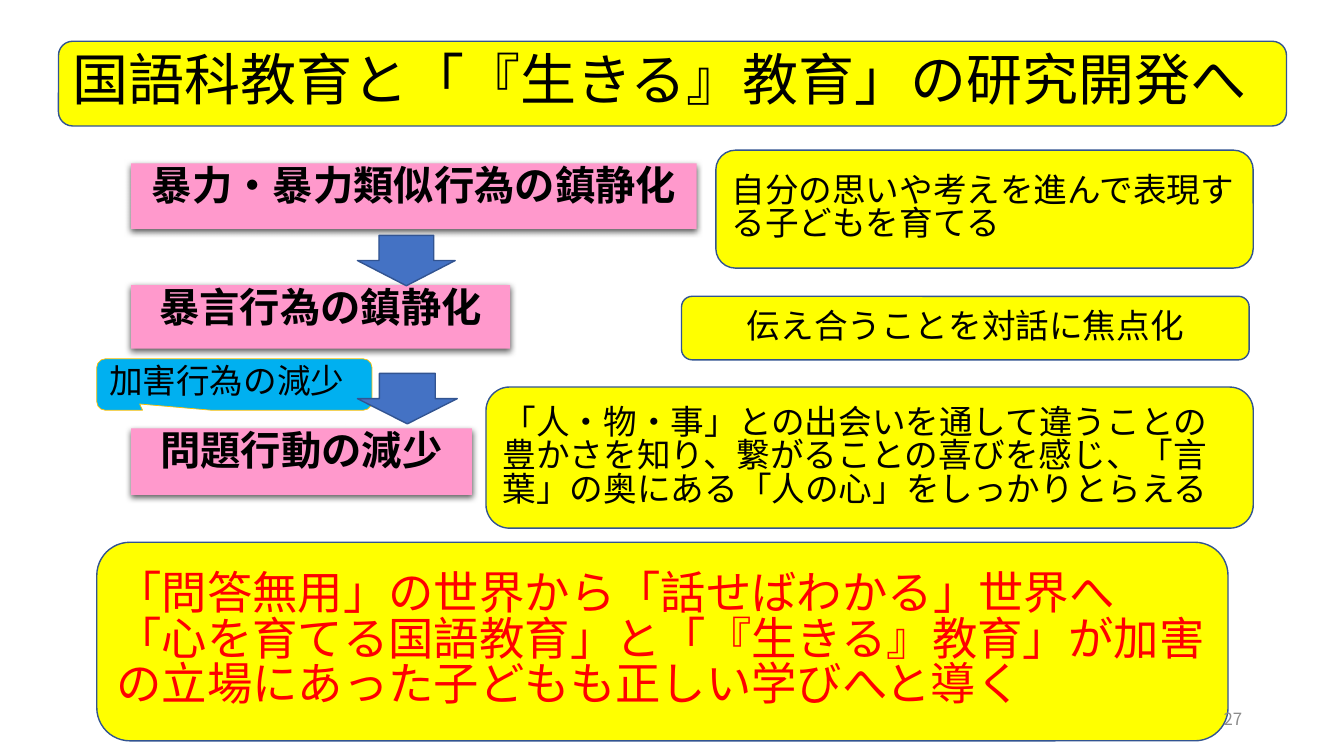
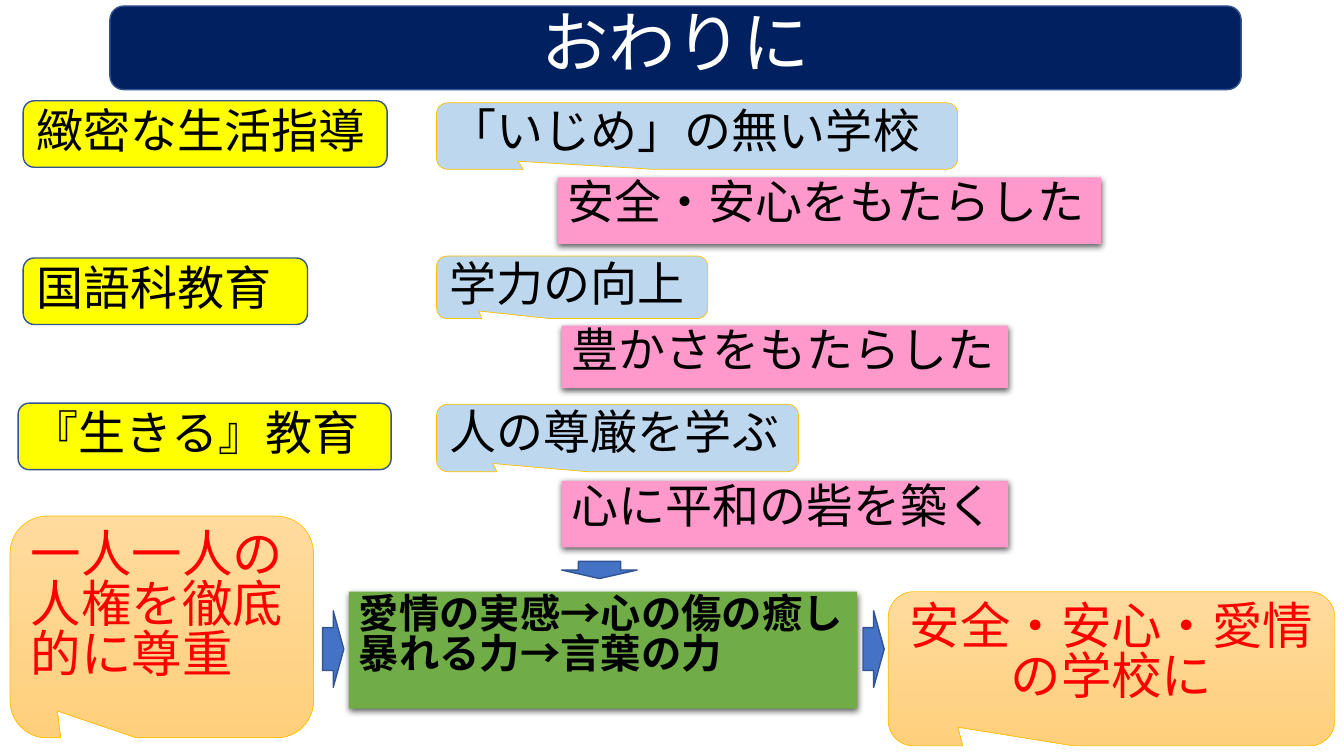
from pptx import Presentation
from pptx.dml.color import RGBColor
from pptx.enum.shapes import MSO_SHAPE
from pptx.enum.text import MSO_ANCHOR, PP_ALIGN
from pptx.oxml import parse_xml
from pptx.oxml.ns import nsdecls, qn
from pptx.util import Inches, Pt

THEME = {
    "font": "Noto Sans CJK JP",
    "line_spacing": 0.83,
    "yellow": "FFFF00", "pink": "FF99CC", "cyan": "00B0F0", "sky": "BDD7EE",
    "navy": "002060", "green": "70AD47", "blue": "4472C4",
    "peach": ("FFDB9E", "FFD07C"),
    "edge": "325491", "gold": "FFC000",
    "black": "000000", "white": "FFFFFF", "red": "FF0000", "gray": "8C8C8C",
    "closing": 48, "title": 40, "appeal": 36, "topic": 33.6,
    "message": 32.4, "step": 28.8, "body": 24, "number": 12,
}
RECT, ROUND = MSO_SHAPE.RECTANGLE, MSO_SHAPE.ROUNDED_RECTANGLE
CALLOUT, ARROW = MSO_SHAPE.ROUNDED_RECTANGULAR_CALLOUT, MSO_SHAPE.RIGHT_ARROW
LEFT, CENTER, RIGHT = PP_ALIGN.LEFT, PP_ALIGN.CENTER, PP_ALIGN.RIGHT
TOP, MIDDLE = MSO_ANCHOR.TOP, MSO_ANCHOR.MIDDLE

PANEL = {"shape": ROUND, "fill": "yellow", "line": ("edge", 1), "anchor": MIDDLE}
TAG = {"shape": RECT, "fill": "pink", "shadow": True, "anchor": TOP}
BUBBLE = {"shape": CALLOUT, "line": ("gold", 0.5), "anchor": TOP,
          "adjust": (-0.344, 0.379, 0.167)}
BLOCK_ARROW = {"shape": ARROW, "fill": "blue", "line": ("edge", 1), "anchor": MIDDLE,
               "adjust": (0.56, 0.5)}
STYLES = {
    "title": PANEL | {"size": "title"},
    "closing": PANEL | {"fill": "navy", "size": "closing", "color": "white", "align": CENTER},
    "panel": PANEL | {"size": "body"},
    "panel_center": PANEL | {"size": "body", "align": CENTER},
    "message": PANEL | {"size": "message", "color": "red"},
    "topic": PANEL | {"size": "topic"},
    "step": TAG | {"size": "step", "bold": True, "align": CENTER},
    "effect": TAG | {"size": "topic"},
    "core": TAG | {"fill": "green", "size": "step", "bold": True},
    "note": BUBBLE | {"fill": "cyan", "size": "body"},
    "result": BUBBLE | {"fill": "sky", "size": "topic"},
    "appeal": BUBBLE | {"fill": "peach", "size": "appeal", "color": "red"},
    "appeal_center": BUBBLE | {"fill": "peach", "size": "appeal", "color": "red", "align": CENTER},
    "arrow_right": BLOCK_ARROW,
    "arrow_down": BLOCK_ARROW | {"rotation": 90},
    "number": {"anchor": MIDDLE, "size": "number", "color": "gray", "align": RIGHT},
}
SHADOW = (
    f'<a:effectLst {nsdecls("a")}><a:outerShdw blurRad="57150" dist="19050" dir="5400000" '
    'algn="ctr" rotWithShape="0"><a:srgbClr val="000000"><a:alpha val="63000"/></a:srgbClr>'
    '</a:outerShdw></a:effectLst>'
)

STEP_X, TOPIC_X, RESULT_X, EFFECT_X = 1.3, 0.23, 4.33, 5.57
SLIDES = [
    [
        ("note", 0.96, 3.56, 2.73, 0.51, "加害行為の減少"),
        ("step", STEP_X, 1.62, 5.61, 0.65, "暴力・暴力類似行為の鎮静化"),
        ("step", STEP_X, 2.83, 3.76, 0.63, "暴言行為の鎮静化"),
        ("arrow_down", 3.78, 2.1, 0.5, 0.97, ""),
        ("arrow_down", 3.79, 3.46, 0.5, 0.99, ""),
        ("step", STEP_X, 4.25, 3.38, 0.66, "問題行動の減少"),
        ("panel", 7.1, 1.49, 5.33, 1.17, "自分の思いや考えを進んで表現する子どもを育てる"),
        ("message", 0.96, 5.38, 11.22, 1.97,
         "「問答無用」の世界から「話せばわかる」世界へ\n"
         "「心を育てる国語教育」と「『生きる』教育」が加害\n"
         "の立場にあった子どもも正しい学びへと導く"),
        ("panel_center", 6.76, 2.94, 5.63, 0.63, "伝え合うことを対話に焦点化"),
        ("panel", 4.82, 3.84, 7.61, 1.4,
         "「人・物・事」との出会いを通して違うことの豊かさを知り、"
         "繋がることの喜びを感じ、「言葉」の奥にある「人の心」をしっかりとらえる"),
        ("number", 9.42, 6.95, 3, 0.4, "27"),
        ("title", 0.58, 0.41, 12.18, 0.84, "国語科教育と「『生きる』教育」の研究開発へ"),
    ],
    [
        ("topic", TOPIC_X, 1, 3.61, 0.66, "緻密な生活指導"),
        ("closing", 1.09, 0.06, 11.22, 0.83, "おわりに"),
        ("topic", TOPIC_X, 2.56, 2.82, 0.66, "国語科教育"),
        ("topic", 0.18, 4, 3.7, 0.66, "『生きる』教育"),
        ("result", RESULT_X, 2.54, 2.69, 0.62, "学力の向上"),
        ("result", RESULT_X, 1.02, 5.17, 0.66, "「いじめ」の無い学校"),
        ("result", RESULT_X, 4.01, 3.59, 0.67, "人の尊厳を学ぶ"),
        ("core", 3.46, 5.87, 5.04, 1.16, "愛情の実感→心の傷の癒し\n暴れる力→言葉の力"),
        ("effect", 5.53, 1.76, 5.39, 0.66, "安全・安心をもたらした"),
        ("effect", EFFECT_X, 4.77, 4.43, 0.66, "心に平和の砦を築く"),
        ("effect", EFFECT_X, 3.23, 4.43, 0.62, "豊かさをもたらした"),
        ("arrow_down", 5.86, 5.28, 0.17, 0.75, ""),
        ("appeal", 0.1, 5.12, 3.01, 2.2, "一人一人の人権を徹底的に尊重"),
        ("appeal_center", 8.81, 5.87, 4.43, 1.53, "安全・安心・愛情\nの学校に"),
        ("arrow_right", 3.2, 6.06, 0.21, 0.76, ""),
        ("arrow_right", 8.56, 6.06, 0.21, 0.76, ""),
    ],
]


def rgb(name):
    return RGBColor.from_string(THEME[name])


def paint(sp, style):
    sp.shadow.inherit = False
    sp.rotation = style.get("rotation", 0)
    for i, value in enumerate(style.get("adjust", ())):
        sp.adjustments[i] = value
    colors = THEME[style["fill"]]
    if isinstance(colors, tuple):
        sp.fill.gradient()
        sp.fill.gradient_angle = 270
        for stop, color in zip(sp.fill.gradient_stops, colors):
            stop.color.rgb = RGBColor.from_string(color)
    else:
        sp.fill.solid()
        sp.fill.fore_color.rgb = rgb(style["fill"])
    if "line" in style:
        color, width = style["line"]
        sp.line.color.rgb = rgb(color)
        sp.line.width = Pt(width)
    else:
        sp.line.fill.background()
    if style.get("shadow"):
        spPr = sp._element.spPr
        spPr.replace(spPr.find(qn("a:effectLst")), parse_xml(SHADOW))


prs = Presentation()
prs.slide_width, prs.slide_height = Inches(13.33), Inches(7.5)

for items in SLIDES:
    s = prs.slides.add_slide(prs.slide_layouts[6])
    for kind, *box, text in items:
        style = STYLES[kind]
        box = [Inches(v) for v in box]
        if "shape" in style:
            sp = s.shapes.add_shape(style["shape"], *box)
            paint(sp, style)
        else:
            sp = s.shapes.add_textbox(*box)
        if not text:
            continue
        tf = sp.text_frame
        tf.word_wrap = True
        tf.vertical_anchor = style["anchor"]
        fmt = {"name": THEME["font"], "size": Pt(THEME[style["size"]]),
               "bold": style.get("bold", False)}
        for i, line in enumerate(text.split("\n")):
            p = tf.add_paragraph() if i else tf.paragraphs[0]
            p.alignment = style.get("align", LEFT)
            p.line_spacing = THEME["line_spacing"]
            r = p.add_run()
            r.text = line
            for key, value in fmt.items():
                setattr(r.font, key, value)
            r.font.color.rgb = rgb(style.get("color", "black"))
            r.font._element.append(
                parse_xml(f'<a:ea {nsdecls("a")} typeface="{THEME["font"]}"/>'))

prs.save("out.pptx")
